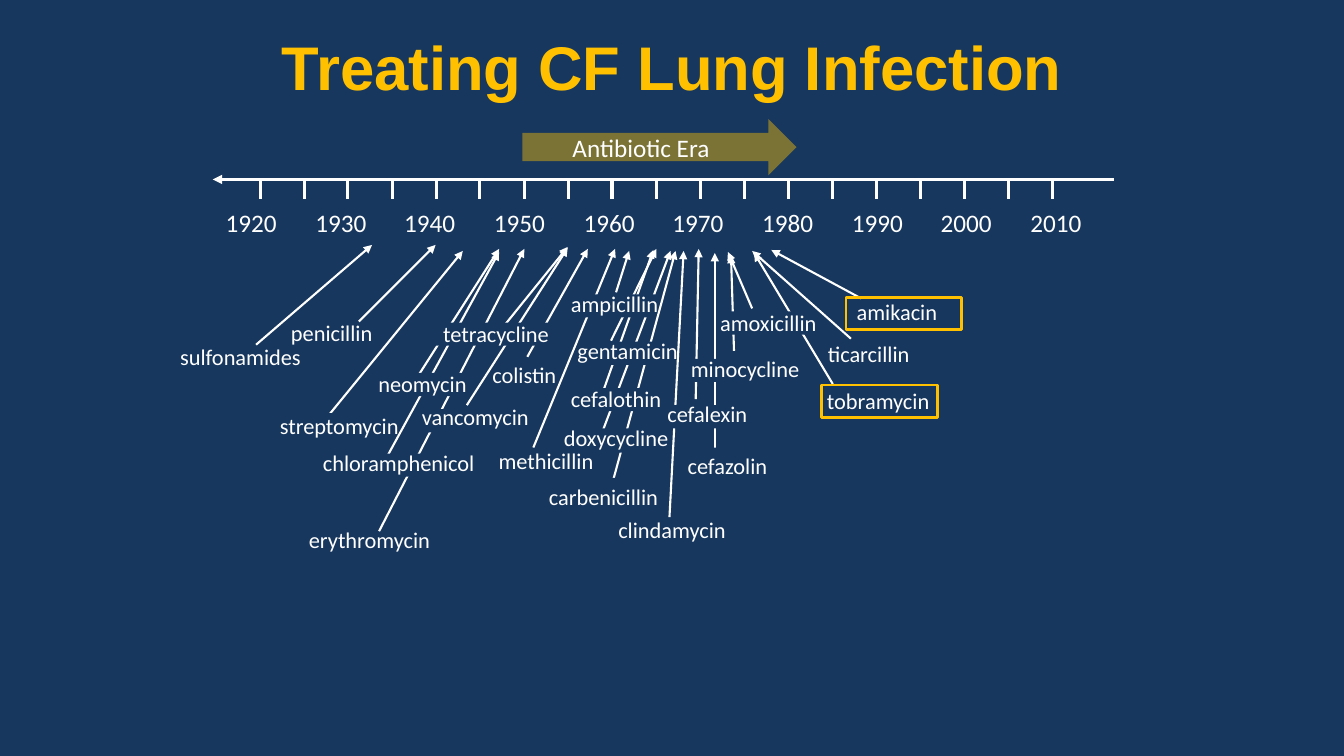
from dataclasses import dataclass

from lxml.etree import SubElement
from pptx import Presentation
from pptx.dml.color import RGBColor
from pptx.enum.shapes import MSO_CONNECTOR, MSO_SHAPE
from pptx.enum.text import MSO_ANCHOR, MSO_AUTO_SIZE, PP_ALIGN
from pptx.oxml.ns import qn
from pptx.util import Pt

EMU_PER_PX = 9144


@dataclass(frozen=True)
class Theme:
    """Colours, fonts, type sizes and line widths of the slide."""
    navy: RGBColor = RGBColor(0x17, 0x37, 0x5E)
    white: RGBColor = RGBColor(0xFF, 0xFF, 0xFF)
    gold: RGBColor = RGBColor(0xFF, 0xC0, 0x00)
    era_opacity: int = 43000
    heading_font: str = "Arial"
    body_font: str = "Calibri"
    title_size: int = 44
    scale_size: int = 18
    drug_size: int = 16
    axis_line: float = 2.25
    pointer_line: float = 1.5
    frame_line: float = 2


THEME = Theme()
DRUG_HEIGHT = 37
AXIS_TOP = 178

BACK_POINTERS = [
    (826, 381, 748, 251), (728, 348, 725, 253), (709, 444, 709, 251),
    (608, 477, 670, 249), (598, 427, 665, 249), (599, 386, 648, 248),
    (606, 338, 651, 247), (529, 444, 610, 247), (523, 354, 583, 247),
    (414, 374, 495, 247), (463, 402, 563, 246), (376, 527, 520, 247),
    (385, 451, 495, 250),
]
FRONT_POINTERS = [
    (326, 412, 459, 249), (254, 342, 369, 243), (356, 319, 432, 243),
    (501, 322, 563, 245), (611, 290, 624, 249), (664, 513, 678, 249),
    (690, 396, 693, 247), (746, 306, 722, 250), (844, 336, 746, 249),
    (854, 296, 765, 248),
]
FILLED_DRUGS = [
    ("sulfonamides", 168, 336, 141), ("carbenicillin", 533, 474, 131),
    ("clindamycin", 602, 507, 129), ("cefazolin", 670, 444, 103),
]
OPEN_DRUGS = [
    ("erythromycin", 293, 517, 147), ("tobramycin", 809, 379, 124),
    ("ticarcillin", 804, 333, 115), ("amikacin", 837, 291, 105),
]
MASKED_DRUGS = [
    ("amoxicillin", 701, 302, 122, (712, 309, 93, 23)),
    ("minocycline", 675, 347, 128, (686, 356, 107, 23)),
    ("ampicillin", 555, 283, 109, (562, 292, 88, 23)),
    ("tetracycline", 429, 313, 126, (430, 320, 115, 23)),
    ("gentamicin", 561, 330, 123, (576, 339, 86, 23)),
    ("colistin", 478, 353, 84, (499, 359, 53, 23)),
    ("cefalexin", 651, 392, 101, (663, 402, 79, 23)),
    ("cefalothin", 553, 377, 116, (593, 385, 54, 23)),
    ("doxycycline ", 547, 416, 128, (582, 425, 54, 24)),
    ("methicillin", 477, 439, 129, (492, 452, 93, 23)),
    ("neomycin", 363, 362, 112, (396, 370, 63, 23)),
    ("streptomycin", 267, 404, 139, (301, 410, 50, 23)),
    ("vancomycin", 408, 395, 127, (416, 406, 107, 23)),
    ("chloramphenicol", 309, 441, 173, (358, 450, 64, 23)),
    ("penicillin", 277, 312, 104, (296, 322, 76, 23)),
]
NEW_DRUG_FRAMES = [(815, 382, 115, 32), (839, 295, 115, 32)]


def px(*lengths):
    """Turn px lengths into EMU."""
    return [length * EMU_PER_PX for length in lengths]


def add_line(page, ends, width, head=False, tail=False):
    """Draw a white line, with an arrowhead at its start or its end."""
    line = page.shapes.add_connector(MSO_CONNECTOR.STRAIGHT, *px(*ends))
    line.line.color.rgb = THEME.white
    line.line.width = Pt(width)
    outline = line.line._get_or_add_ln()
    for wanted, tag in ((head, "a:headEnd"), (tail, "a:tailEnd")):
        if wanted:
            SubElement(outline, qn(tag), type="triangle")
    SubElement(line._element.spPr, qn("a:effectLst"))


def add_block(page, kind, bounds, fill=None, frame=None):
    """Draw a flat shape with an optional fill and frame colour."""
    block = page.shapes.add_shape(kind, *px(*bounds))
    block.shadow.inherit = False
    if fill is None:
        block.fill.background()
    else:
        block.fill.solid()
        block.fill.fore_color.rgb = fill
    if frame is None:
        block.line.fill.background()
    else:
        block.line.color.rgb = frame
        block.line.width = Pt(THEME.frame_line)
    return block


def write(box, text, size, align=PP_ALIGN.CENTER, color=THEME.white,
          font=THEME.body_font, bold=False, wrap=True):
    """Write one run of text into a box."""
    frame = box.text_frame
    frame.word_wrap = wrap
    frame.auto_size = MSO_AUTO_SIZE.SHAPE_TO_FIT_TEXT
    frame.vertical_anchor = MSO_ANCHOR.TOP
    para = frame.paragraphs[0]
    para.alignment = align
    span = para.add_run()
    span.text = text
    span.font.name = font
    span.font.size = Pt(size)
    span.font.bold = bold
    span.font.color.rgb = color


def add_title(page):
    """Place the slide title."""
    box = page.shapes.add_textbox(*px(217, 3, 900, 125))
    write(box, "Treating CF Lung Infection", THEME.title_size,
          color=THEME.gold, font=THEME.heading_font, bold=True)
    box.text_frame.auto_size = MSO_AUTO_SIZE.NONE
    box.text_frame.vertical_anchor = MSO_ANCHOR.MIDDLE


def add_time_axis(page):
    """Draw the axis with a tick each five years and a label each ten."""
    for index in range(19):
        left = round(258 + index * 43.67)
        add_line(page, (left, AXIS_TOP, left, AXIS_TOP + 19), THEME.axis_line)
    for index, year in enumerate(range(1920, 2011, 10)):
        left = round(214 + index * 88.67)
        box = page.shapes.add_textbox(*px(left, 201, 71, 40))
        write(box, str(year), THEME.scale_size, PP_ALIGN.LEFT, wrap=False)
    add_line(page, (211, AXIS_TOP, 1105, AXIS_TOP), THEME.axis_line, head=True)


def add_pointers(page, pointers):
    """Draw arrows from drugs to their dates."""
    for ends in pointers:
        add_line(page, ends, THEME.pointer_line, tail=True)


def add_drug(page, name, left, top, width, filled=False):
    """Place a drug name, on a filled box if asked."""
    bounds = (left, top, width, DRUG_HEIGHT)
    if filled:
        box = add_block(page, MSO_SHAPE.RECTANGLE, bounds, fill=THEME.navy)
    else:
        box = page.shapes.add_textbox(*px(*bounds))
    write(box, name, THEME.drug_size, wrap=name not in ("sulfonamides", "vancomycin"))


def add_era(page):
    """Draw the see-through era arrow and its caption."""
    arrow = add_block(page, MSO_SHAPE.RIGHT_ARROW, (518, 118, 272, 56), fill=THEME.gold)
    color = arrow._element.spPr.find(qn("a:solidFill"))[0]
    SubElement(color, qn("a:alpha"), val=str(THEME.era_opacity))
    box = page.shapes.add_textbox(*px(558, 126, 176, 40))
    write(box, "Antibiotic Era", THEME.scale_size, PP_ALIGN.LEFT)


def main():
    """Build the slide and save it."""
    deck = Presentation()
    deck.slide_width, deck.slide_height = px(1333, 750)
    page = deck.slides.add_slide(deck.slide_layouts[6])
    page.background.fill.solid()
    page.background.fill.fore_color.rgb = THEME.navy
    add_pointers(page, BACK_POINTERS)
    add_title(page)
    add_time_axis(page)
    for drug in FILLED_DRUGS:
        add_drug(page, *drug, filled=True)
    add_pointers(page, FRONT_POINTERS)
    for drug in OPEN_DRUGS:
        add_drug(page, *drug)
    for *drug, mask in MASKED_DRUGS:
        add_block(page, MSO_SHAPE.RECTANGLE, mask, fill=THEME.navy)
        add_drug(page, *drug)
    add_era(page)
    for bounds in NEW_DRUG_FRAMES:
        add_block(page, MSO_SHAPE.RECTANGLE, bounds, frame=THEME.gold)
    deck.save("out.pptx")


if __name__ == "__main__":
    main()
